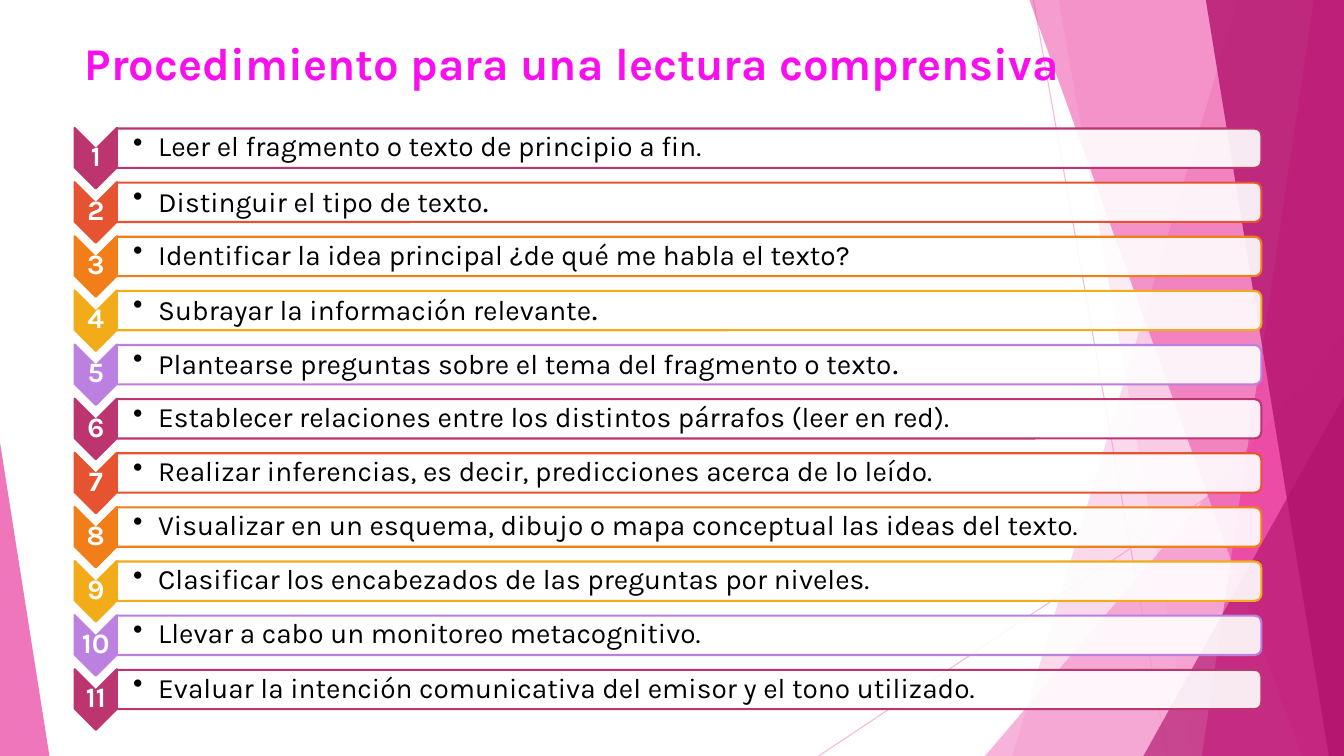
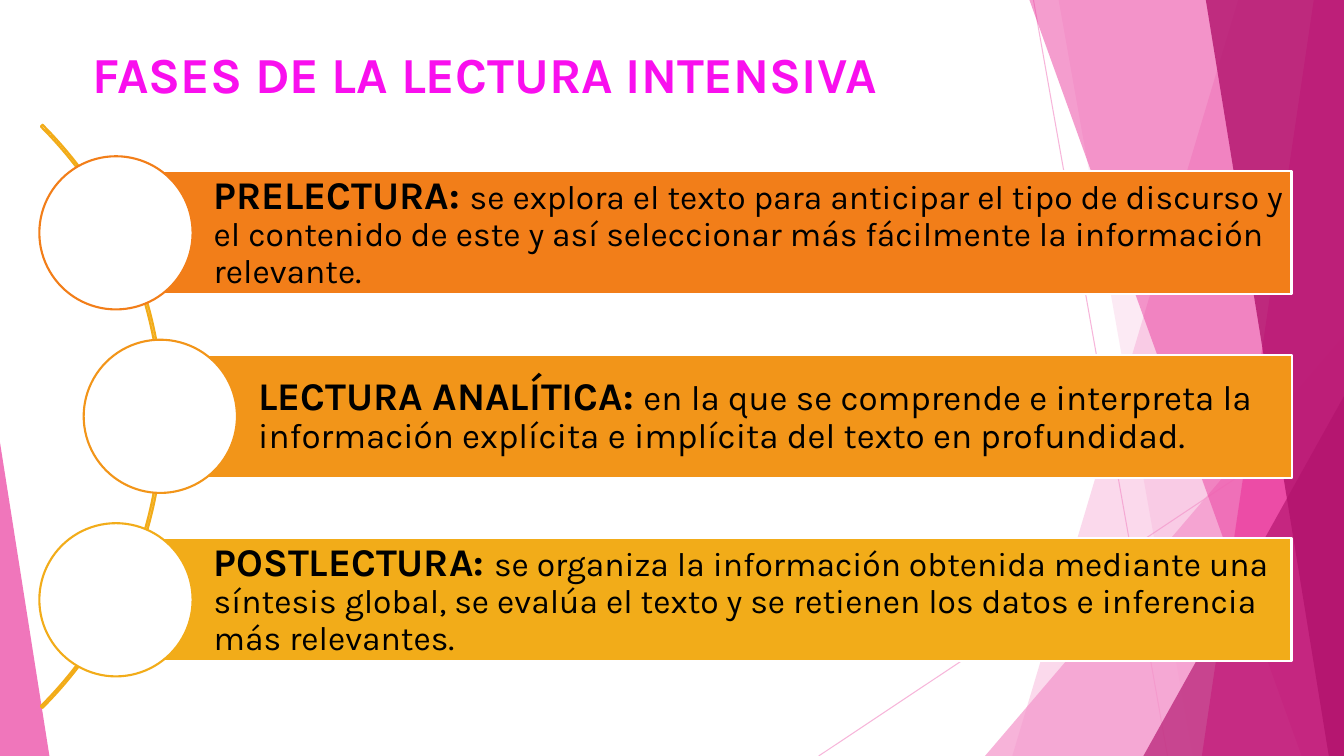
import pptx
import pptx.dml.color
import pptx.enum.shapes
import pptx.enum.text
import pptx.oxml
import pptx.oxml.ns
import pptx.util

Inches = pptx.util.Inches
Pt = pptx.util.Pt
Shape = pptx.enum.shapes.MSO_SHAPE
Align = pptx.enum.text.PP_ALIGN
Anchor = pptx.enum.text.MSO_ANCHOR
qn = pptx.oxml.ns.qn

FONT = "Karla"
WIDTH, HEIGHT = 13.33, 7.5
WHITE, BLACK, MAGENTA = "FFFFFF", "000000", "F90FEE"
LIGHT_PINK, PINK, DARK_PINK = "F496CB", "EB3D9F", "B2136D"
BERRY, RED, ORANGE, AMBER, YELLOW, LILAC = (
    "BC356F", "E65331", "F27E19", "F29519", "F2AC19", "BC80E0")


def paint(fill, color, shape=None, opacity=100):
    """Make a fill solid; with opacity, fade the first colour of the shape."""
    fill.solid()
    fill.fore_color.rgb = pptx.dml.color.RGBColor.from_string(color)
    if opacity < 100:
        first_color = next(shape.element.iter(qn("a:srgbClr")))
        alpha = pptx.oxml.parse_xml(
            f'<a:alpha {pptx.oxml.ns.nsdecls("a")} val="{opacity * 1000}"/>')
        first_color.append(alpha)


def write(shape, runs, color, insets, anchor=Anchor.MIDDLE,
          align=Align.LEFT, line_spacing=0.9):
    """Fill a shape with one paragraph of (text, size, bold) runs."""
    frame = shape.text_frame
    left, top, right, bottom = map(Inches, insets)
    frame_format = {
        "word_wrap": True,
        "auto_size": pptx.enum.text.MSO_AUTO_SIZE.NONE,
        "vertical_anchor": anchor,
        "margin_left": left,
        "margin_top": top,
        "margin_right": right,
        "margin_bottom": bottom,
    }
    for name, value in frame_format.items():
        setattr(frame, name, value)
    paragraph = frame.paragraphs[0]
    paragraph.alignment = align
    paragraph.line_spacing = line_spacing
    for text, size, bold in runs:
        run = paragraph.add_run()
        run.text = text
        for name, value in {"name": FONT, "size": Pt(size), "bold": bold}.items():
            setattr(run.font, name, value)
        paint(run.font.fill, color)
    return paragraph


presentation = pptx.Presentation()
presentation.slide_width = Inches(WIDTH)
presentation.slide_height = Inches(HEIGHT)
layout = presentation.slide_layouts[5]

# Titles
titles = [
    ("Procedimiento para una lectura comprensiva", 32.4, (0.74, 0.25, 11.66, 0.59)),
    ("FASES DE LA LECTURA INTENSIVA", 36, (0.82, 0.33, 9.33, 0.76)),
]
slides = []
for text, size, box in titles:
    slide = presentation.slides.add_slide(layout)
    title = slide.shapes.title
    title.left, title.top, title.width, title.height = map(Inches, box)
    write(title, [(text, size, True)], MAGENTA, (0.1, 0.1, 0.1, 0),
          anchor=Anchor.TOP, line_spacing=1.0)
    slides.append(slide)
steps_slide, phases_slide = slides

# Shared backdrop, drawn once and moved to the layout
backdrop = steps_slide.shapes.add_group_shape()
for ends in [(10.25, 0, 11.58, HEIGHT), (WIDTH, 4.03, 8.12, HEIGHT)]:
    ray = backdrop.shapes.add_connector(
        pptx.enum.shapes.MSO_CONNECTOR.STRAIGHT, *map(Inches, ends))
    paint(ray.line.fill, LIGHT_PINK, ray, 70)
    ray.line.width = Pt(0.75)
    ray.element.spPr.append(pptx.oxml.parse_xml(
        f'<a:effectLst {pptx.oxml.ns.nsdecls("a")}/>'))

# A band has the x of its top and bottom left corners and ends at the right
# edge; a triangle has left, top, width and apex position and ends at the bottom.
facets = [
    ("band", (12.28, 10.04), LIGHT_PINK, 36),
    ("band", (10.5, 11.83), LIGHT_PINK, 20),
    ("triangle", (9.77, 3.33, 3.56, 1), LIGHT_PINK, 72),
    ("band", (10.21, 12.91), PINK, 50),
    ("band", (13.03, 11.92), PINK, 70),
    ("band", (11.96, 13.18), DARK_PINK, 80),
    ("triangle", (11.34, 3.93, 1.99, 1), DARK_PINK, 66),
    ("triangle", (0, 4.39, 0.49, 0), PINK, 70),
]
for kind, geometry, color, opacity in facets:
    if kind == "band":
        top_x, bottom_x = geometry
        builder = backdrop.shapes.build_freeform(Inches(top_x), 0)
        corners = [(WIDTH, 0), (WIDTH, HEIGHT), (bottom_x, HEIGHT)]
        builder.add_line_segments([(Inches(x), Inches(y)) for x, y in corners])
        facet = builder.convert_to_shape()
    else:
        left, top, width, apex = geometry
        facet = backdrop.shapes.add_shape(
            Shape.ISOSCELES_TRIANGLE, Inches(left), Inches(top),
            Inches(width), Inches(HEIGHT - top))
        facet.adjustments[0] = apex
    paint(facet.fill, color, facet, opacity)
    facet.line.fill.background()
    facet.shadow.inherit = False
layout.shapes.element.insert(2, backdrop.element)

# Slide 1: numbered steps, each with the size of its full stop
steps = [
    ("Leer el fragmento o texto de principio a fin", 20),
    ("Distinguir el tipo de texto", 23),
    ("Identificar la idea principal ¿de qué me habla el texto?", None),
    ("Subrayar la información relevante", 23),
    ("Plantearse preguntas sobre el tema del fragmento o texto", 23),
    ("Establecer relaciones entre los distintos párrafos (leer en red)", 20),
    ("Realizar inferencias, es decir, predicciones acerca de lo leído", 20),
    ("Visualizar en un esquema, dibujo o mapa conceptual las ideas del texto", 20),
    ("Clasificar los encabezados de las preguntas por niveles", 20),
    ("Llevar a cabo un monitoreo metacognitivo", 20),
    ("Evaluar la intención comunicativa del emisor y el tono utilizado", 20),
]
step_colors = [BERRY, RED, ORANGE, YELLOW, LILAC]
first_center, last_center = 1.47, 6.84
step_pitch = (last_center - first_center) / (len(steps) - 1)
bar_left, bar_length, bar_height = 1.16, 11.35, 0.39
chevron_length, chevron_width = 0.6, 0.42
chevron_center = 0.95
small_insets = (0.01, 0.01, 0.01, 0.01)

for index, (text, stop_size) in enumerate(steps):
    center = first_center + index * step_pitch
    color = step_colors[index % len(step_colors)]
    # Both shapes are turned a quarter, so width is the length before turning.
    turned_shapes = [
        (Shape.CHEVRON, chevron_center, center + 0.1,
         chevron_length, chevron_width, color, 100),
        (Shape.ROUND_2_SAME_RECTANGLE, bar_left + bar_length / 2, center,
         bar_height, bar_length, WHITE, 90),
    ]
    for preset, x, y, width, height, fill, opacity in turned_shapes:
        shape = steps_slide.shapes.add_shape(
            preset, Inches(x - width / 2), Inches(y - height / 2),
            Inches(width), Inches(height))
        shape.rotation = 90
        shape.shadow.inherit = False
        paint(shape.fill, fill, shape, opacity)
        paint(shape.line.fill, color)
        shape.line.width = Pt(1.5)

    number = steps_slide.shapes.add_textbox(
        Inches(chevron_center - chevron_width / 2), Inches(center),
        Inches(chevron_width), Inches(0.18))
    write(number, [(str(index + 1), 20, True)], WHITE, small_insets,
          align=Align.CENTER)

    label = steps_slide.shapes.add_textbox(
        Inches(bar_left), Inches(center - 0.18), Inches(11.33), Inches(0.35))
    runs = [(text, 20, False)]
    if stop_size:
        runs.append((".", stop_size, False))
    paragraph = write(label, runs, BLACK, (0.16, 0.01, 0.01, 0.01))
    properties = paragraph._p.get_or_add_pPr()
    properties.set("marL", str(Inches(0.25)))
    properties.set("indent", str(Inches(-0.25)))
    properties.append(pptx.oxml.parse_xml(
        f'<a:buChar {pptx.oxml.ns.nsdecls("a")} char="•"/>'))

# Slide 2: three phases along an arc
arc_size, arc_center = 8.18, 4.13
arc = phases_slide.shapes.add_shape(
    Shape.BLOCK_ARC, Inches(-6.56), Inches(arc_center - arc_size / 2),
    Inches(arc_size), Inches(arc_size))
for index, value in enumerate([189, 27, 0.003]):
    arc.adjustments[index] = value
arc.fill.background()
paint(arc.line.fill, YELLOW)
arc.line.width = Pt(1.5)
arc.shadow.inherit = False

phases = [
    ("PRELECTURA: ", "se explora el texto para anticipar el tipo de discurso y el "
     "contenido de este y así seleccionar más fácilmente la información relevante.",
     24, 1.15, ORANGE),
    ("LECTURA ANALÍTICA: ", "en la que se comprende e interpreta la información "
     "explícita e implícita del texto en profundidad.", 25, 1.59, AMBER),
    ("POSTLECTURA: ", "se organiza la información obtenida mediante una síntesis "
     "global, se evalúa el texto y se retienen los datos e inferencia más relevantes.",
     24, 1.15, YELLOW),
]
phase_pitch, phase_height, phase_right, circle_size = 1.82, 1.22, 12.81, 1.52
for index, (name, description, size, left, color) in enumerate(phases):
    center = arc_center + (index - 1) * phase_pitch
    bar = phases_slide.shapes.add_shape(
        Shape.RECTANGLE, Inches(left), Inches(center - phase_height / 2),
        Inches(phase_right - left), Inches(phase_height))
    write(bar, [(name, 28, True), (description, size, False)], BLACK,
          (0.97, 0.08, 0.08, 0.08))
    circle = phases_slide.shapes.add_shape(
        Shape.OVAL, Inches(left - circle_size / 2), Inches(center - circle_size / 2),
        Inches(circle_size), Inches(circle_size))
    for shape, fill, outline in [(bar, color, WHITE), (circle, WHITE, color)]:
        paint(shape.fill, fill)
        paint(shape.line.fill, outline)
        shape.line.width = Pt(1.5)
        shape.shadow.inherit = False

presentation.save("out.pptx")
